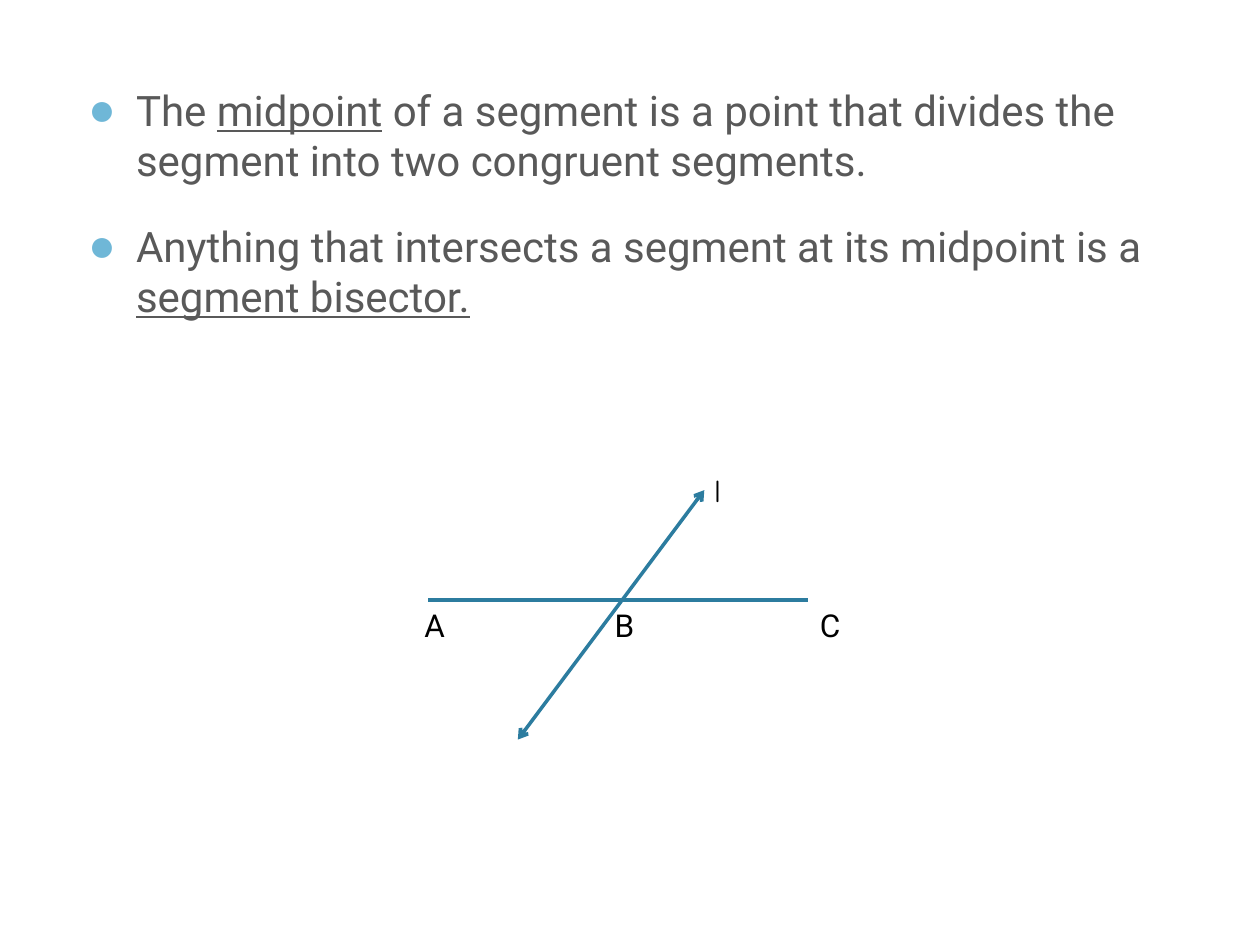
"""Build a slide that defines midpoint and segment bisector, with a diagram."""
import pptx
import pptx.dml.color
import pptx.enum.shapes
import pptx.enum.text
import pptx.oxml
import pptx.oxml.ns
import pptx.util

GREY = pptx.dml.color.RGBColor(0x59, 0x59, 0x59)
BLACK = pptx.dml.color.RGBColor(0, 0, 0)
TEAL = pptx.dml.color.RGBColor(0x2C, 0x7C, 0x9F)
SKY = pptx.dml.color.RGBColor(0x6F, 0xB7, 0xD7)
NS = pptx.oxml.ns.nsdecls("a")
Inches, Pt = pptx.util.Inches, pptx.util.Pt


def add_run(p, text, size, font, color, underline=False):
    """Append a formatted run to a paragraph."""
    r = p.add_run()
    r.text = text
    r.font.size, r.font.name = Pt(size), font
    r.font.color.rgb = color
    r.font.underline = underline


prs = pptx.Presentation()
prs.slide_width, prs.slide_height = Inches(10), Inches(7.5)
s = prs.slides.add_slide(prs.slide_layouts[1])
title = s.shapes.title.element
title.getparent().remove(title)

body = s.placeholders[1]
body.left, body.top = Inches(0.6), Inches(0.62)
body.width, body.height = Inches(8.8), Inches(4.75)
tf = body.text_frame
tf.auto_size = pptx.enum.text.MSO_AUTO_SIZE.NONE
bullets = [
    [("The ", False), ("midpoint", True),
     (" of a segment is a point that divides the segment into two congruent segments.", False)],
    [("Anything that intersects a segment at its midpoint is a ", False),
     ("segment bisector.", True)],
]
for i, runs in enumerate(bullets):
    p = tf.add_paragraph() if i else tf.paragraphs[0]
    p.space_before = Pt(20)
    pPr = p._p.get_or_add_pPr()
    pPr.set("marL", str(Inches(0.38)))
    pPr.set("indent", str(-Inches(0.38)))
    for xml in (f'<a:buClr {NS}><a:srgbClr val="{SKY}"/></a:buClr>',
                f'<a:buSzPct {NS} val="110000"/>',
                f'<a:buFont {NS} typeface="Arial"/>',
                f'<a:buChar {NS} char="●"/>'):
        pPr.append(pptx.oxml.parse_xml(xml))
    for text, underline in runs:
        add_run(p, text, 24, "Roboto", GREY, underline)

axis = 4.76
for x1, y1, x2, y2, arrows in [(3.4, axis, 6.41, axis, False),
                               (4.11, 5.87, 5.59, 3.89, True)]:
    line = s.shapes.add_connector(pptx.enum.shapes.MSO_CONNECTOR.STRAIGHT,
                                  Inches(x1), Inches(y1), Inches(x2), Inches(y2))
    line.line.color.rgb = TEAL
    line.line.width = Pt(2)
    if arrows:
        for end in ("headEnd", "tailEnd"):
            line.line._get_or_add_ln().append(
                pptx.oxml.parse_xml(f'<a:{end} {NS} type="arrow"/>'))
    line._element.spPr.append(pptx.oxml.parse_xml(f"<a:effectLst {NS}/>"))

for text, x, y, font in [("A", 3.27, axis, "Roboto"), ("B", 4.78, axis, "Roboto"),
                         ("C", 6.41, axis, "Roboto"), ("l", 5.57, 3.69, "Comic Neue")]:
    sp = s.shapes.add_textbox(Inches(x), Inches(y), Inches(0.5), Inches(0.4))
    tf = sp.text_frame
    tf.word_wrap = True
    tf.auto_size = pptx.enum.text.MSO_AUTO_SIZE.SHAPE_TO_FIT_TEXT
    add_run(tf.paragraphs[0], text, 18, font, BLACK)

prs.save("out.pptx")
